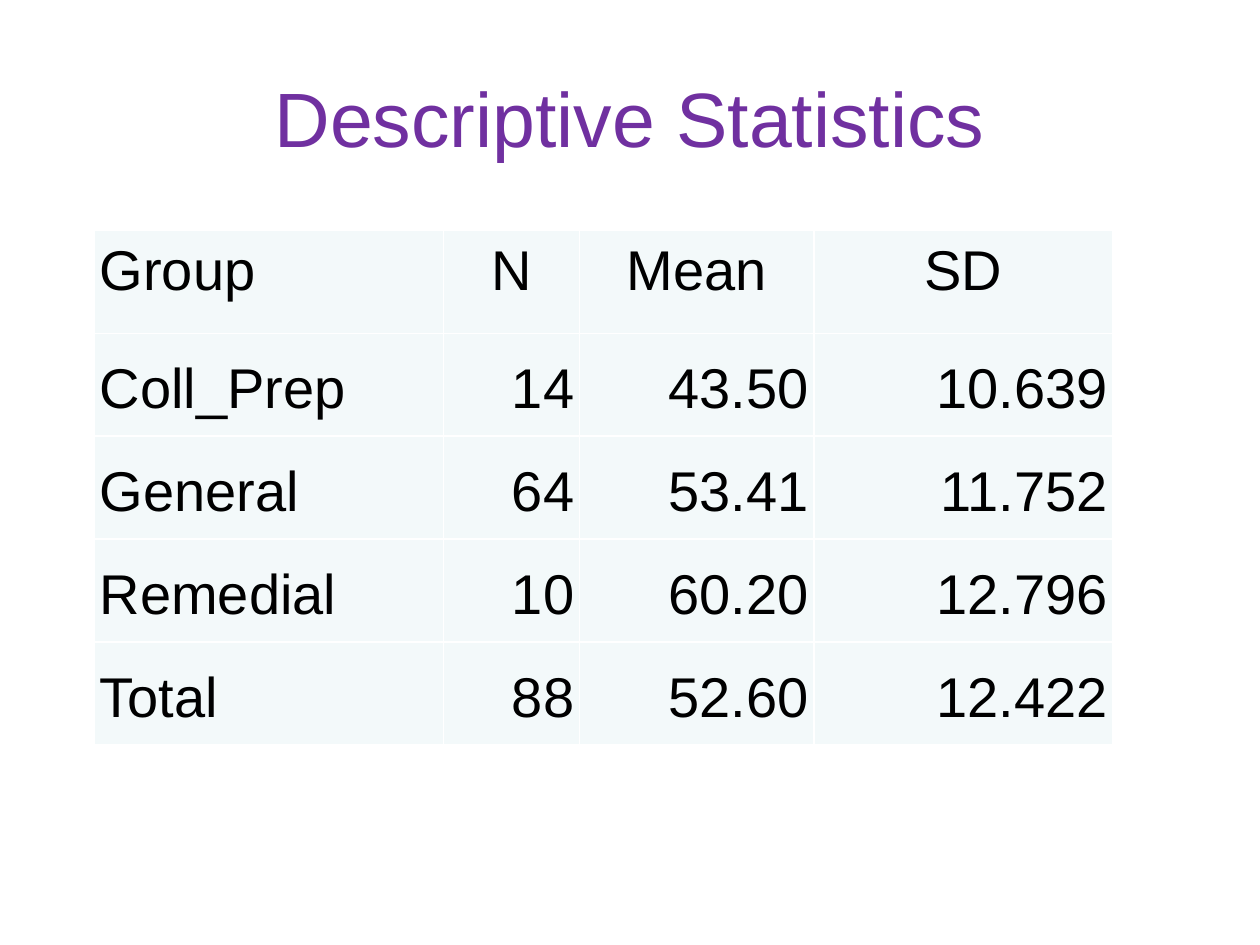
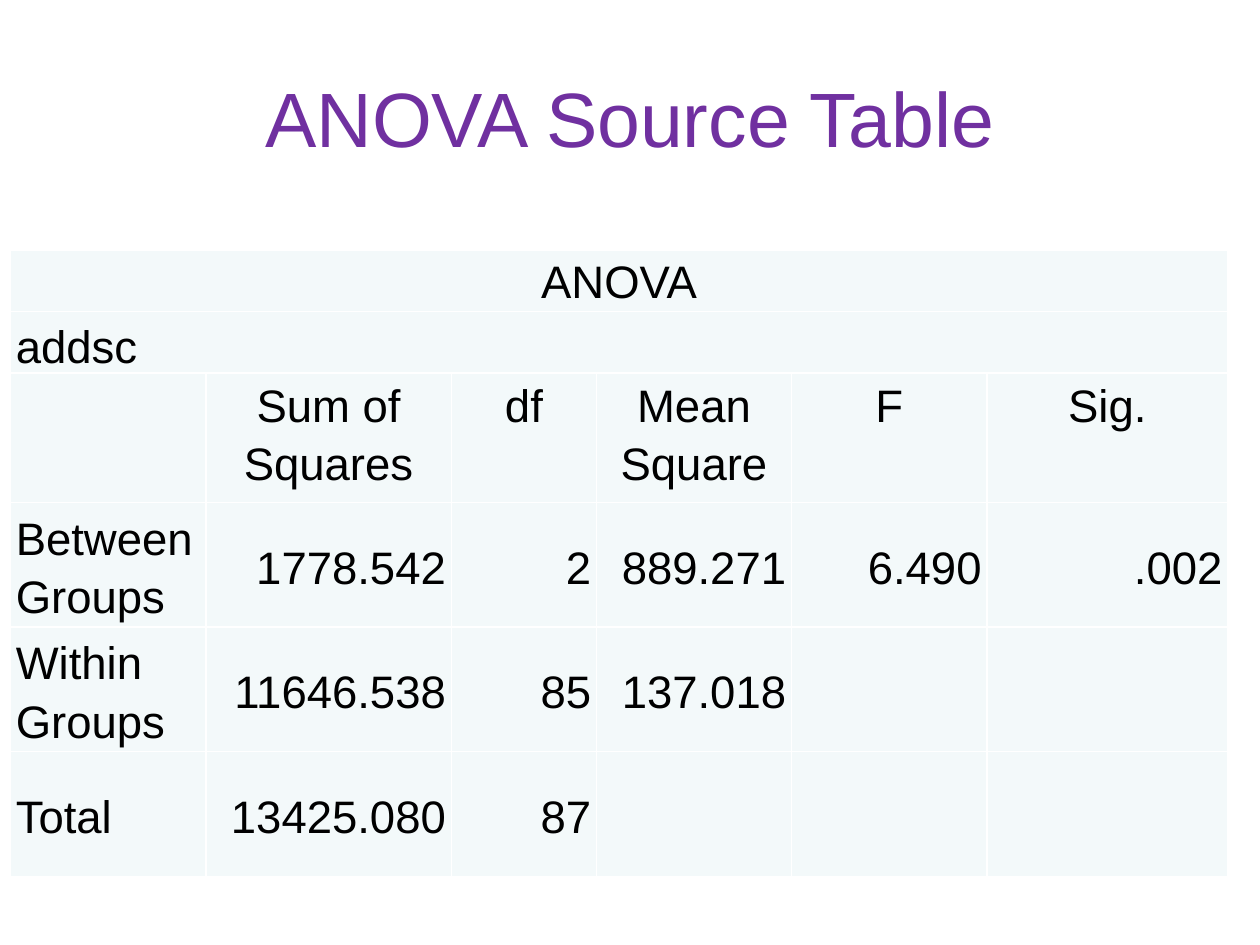
"""Build two slides of ANOVA results: descriptive statistics and the source table."""
from dataclasses import dataclass
from typing import Any

from lxml.etree import SubElement
from pptx import Presentation
from pptx.dml.color import RGBColor
from pptx.enum.text import MSO_ANCHOR, PP_ALIGN
from pptx.oxml.ns import qn
from pptx.util import Pt


@dataclass(frozen=True)
class Theme:
    """Colours, font and sizes shared by the slides."""
    font: str = "Arial"
    title: RGBColor = RGBColor(0x70, 0x30, 0xA0)
    text: RGBColor = RGBColor(0, 0, 0)
    cell: RGBColor = RGBColor(0xF3, 0xF9, 0xFA)
    border: str = "FFFFFF"
    border_width: int = Pt(1)
    title_size: int = Pt(44)
    indent: int = Pt(3)
    line_spacing: float = 1.15


@dataclass(frozen=True)
class RowStyle:
    """Vertical anchor of a row, alignment of its first cell and of the rest."""
    anchor: MSO_ANCHOR
    first: PP_ALIGN = PP_ALIGN.LEFT
    rest: PP_ALIGN = PP_ALIGN.RIGHT


@dataclass(frozen=True)
class Row:
    """A table row; a single text spans all columns."""
    height: float
    style: RowStyle
    texts: tuple[str, ...]


@dataclass(frozen=True)
class TableSlide:
    """A slide with a title and one table, lengths in points."""
    title: str
    left: float
    top: float
    size: int
    widths: tuple[float, ...]
    rows: tuple[Row, ...]


THEME = Theme()
BANNER = RowStyle(MSO_ANCHOR.TOP, PP_ALIGN.CENTER)
VARIABLE = RowStyle(MSO_ANCHOR.BOTTOM)
HEAD = RowStyle(MSO_ANCHOR.TOP, rest=PP_ALIGN.CENTER)
BODY = RowStyle(MSO_ANCHOR.MIDDLE)

SLIDES = (
    TableSlide("Descriptive Statistics", 54, 131.8, 32, (199.4, 77.8, 133.9, 171), (
        Row(58.75, HEAD, ("Group", "N", "Mean", "SD")),
        Row(58.75, BODY, ("Coll_Prep", "14", "43.50", "10.639")),
        Row(58.75, BODY, ("General", "64", "53.41", "11.752")),
        Row(58.75, BODY, ("Remedial", "10", "60.20", "12.796")),
        Row(58.75, BODY, ("Total", "88", "52.60", "12.422")),
    )),
    TableSlide("ANOVA Source Table", 6, 142.8, 26, (111.6, 140.4, 82.8, 111.6, 111.6, 137.6), (
        Row(35.25, BANNER, ("ANOVA",)),
        Row(35.25, VARIABLE, ("addsc",)),
        Row(73.9, HEAD, ("", "Sum of Squares", "df", "Mean Square", "F", "Sig.")),
        Row(71.2, BODY, ("Between Groups", "1778.542", "2", "889.271", "6.490", ".002")),
        Row(71.2, BODY, ("Within Groups", "11646.538", "85", "137.018", "", "")),
        Row(71.2, BODY, ("Total", "13425.080", "87", "", "", "")),
    )),
)


def apply(target: Any, values: dict[str, Any]) -> None:
    """Set each named attribute on the target."""
    for name, value in values.items():
        setattr(target, name, value)


def write(p: Any, text: str, size: int, color: RGBColor) -> None:
    """Add a formatted run to a paragraph."""
    r = p.add_run()
    r.text = text
    apply(r.font, {"name": THEME.font, "size": size})
    r.font.color.rgb = color


def add_title(slide: Any, text: str) -> None:
    """Place and fill the title placeholder."""
    sp = slide.shapes.title
    apply(sp, {"left": Pt(36), "top": Pt(21.6), "width": Pt(648), "height": Pt(90)})
    tf = sp.text_frame
    tf.vertical_anchor = MSO_ANCHOR.MIDDLE
    p = tf.paragraphs[0]
    p.alignment = PP_ALIGN.CENTER
    write(p, text, THEME.title_size, THEME.title)


def paint_cell(cell: Any) -> None:
    """Give a cell its borders, margins and fill."""
    tc_pr = cell._tc.get_or_add_tcPr()
    for side in "LRTB":
        ln = SubElement(tc_pr, qn(f"a:ln{side}"), w=str(THEME.border_width))
        fill = SubElement(ln, qn("a:solidFill"))
        SubElement(fill, qn("a:srgbClr"), val=THEME.border)
    apply(cell, {f"margin_{side}": 0 for side in ("left", "right", "top", "bottom")})
    cell.fill.solid()
    cell.fill.fore_color.rgb = THEME.cell


def fill_cell(cell: Any, text: str, style: RowStyle, align: PP_ALIGN, size: int) -> None:
    """Write an aligned text into a cell."""
    cell.vertical_anchor = style.anchor
    p = cell.text_frame.paragraphs[0]
    apply(p, {"alignment": align, "line_spacing": THEME.line_spacing})
    p_pr = p._p.get_or_add_pPr()
    for name, value in {"marL": THEME.indent, "marR": THEME.indent, "indent": 0}.items():
        p_pr.set(name, str(value))
    write(p, text, size, THEME.text)


def add_table(slide: Any, spec: TableSlide) -> None:
    """Draw the table of a slide."""
    width, height = sum(spec.widths), sum(row.height for row in spec.rows)
    table = slide.shapes.add_table(
        len(spec.rows), len(spec.widths),
        Pt(spec.left), Pt(spec.top), Pt(width), Pt(height)).table
    apply(table, {"first_row": False, "horz_banding": False})
    for column, column_width in zip(table.columns, spec.widths):
        column.width = Pt(column_width)
    for i, row in enumerate(spec.rows):
        table.rows[i].height = Pt(row.height)
        for cell in table.rows[i].cells:
            paint_cell(cell)
        if len(row.texts) == 1:
            table.cell(i, 0).merge(table.cell(i, len(spec.widths) - 1))
        for j, text in enumerate(row.texts):
            if text:
                align = row.style.rest if j else row.style.first
                fill_cell(table.cell(i, j), text, row.style, align, Pt(spec.size))


def main() -> None:
    """Build and save the presentation."""
    prs = Presentation()
    apply(prs, {"slide_width": Pt(720), "slide_height": Pt(540)})
    for spec in SLIDES:
        slide = prs.slides.add_slide(prs.slide_layouts.get_by_name("Title Only"))
        add_title(slide, spec.title)
        add_table(slide, spec)
    prs.save("out.pptx")


if __name__ == "__main__":
    main()
